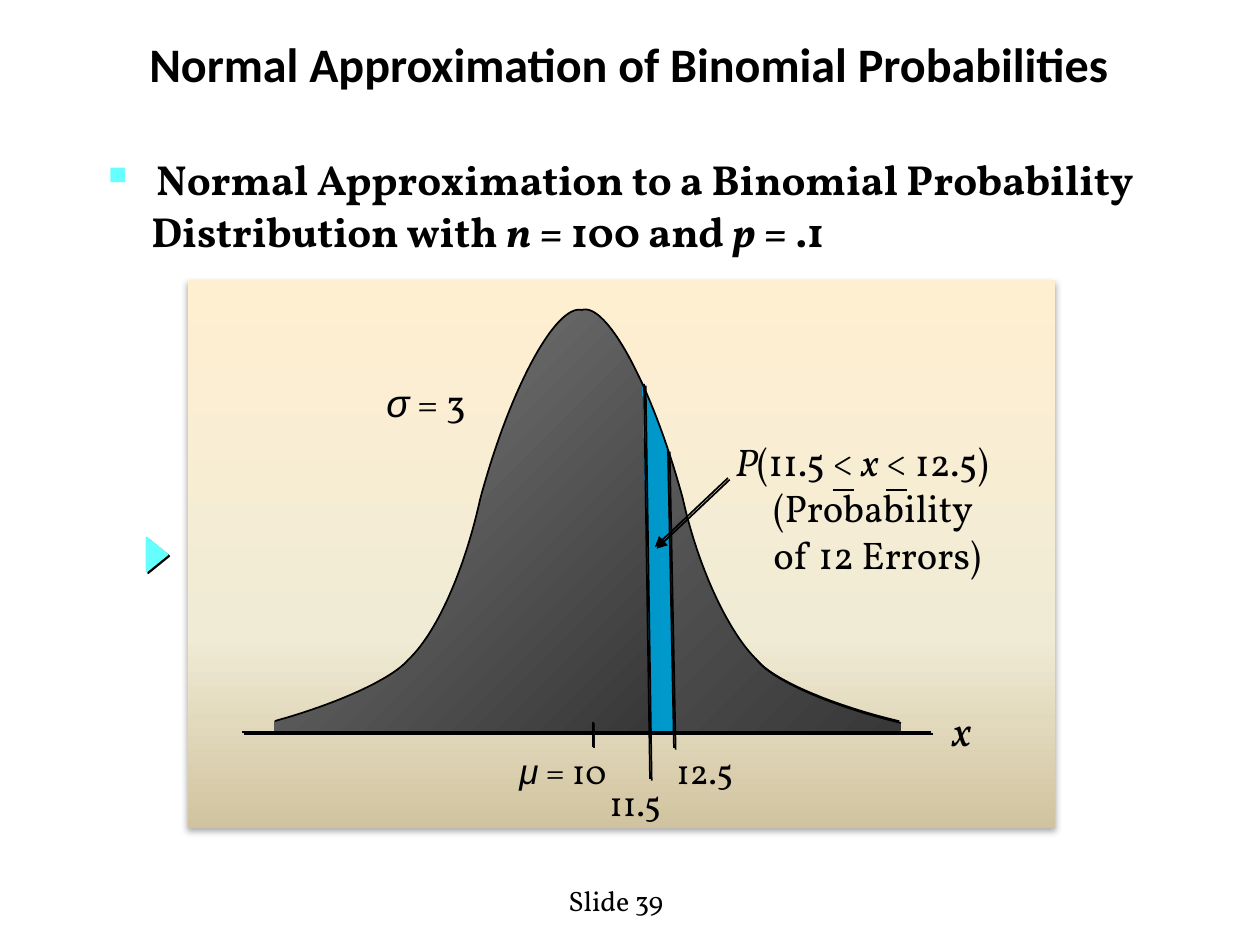
from typing import NamedTuple

import pptx
import pptx.dml.color
import pptx.enum.shapes
import pptx.enum.text
import pptx.oxml
import pptx.oxml.ns
import pptx.util

PX = 914400 / 126
COLORS = {
    "ink": "000000", "aqua": "66FFFF", "tick_shadow": "0D0A10",
    "sand_top": "FFEFD1", "sand_mid": "F0EBD5", "sand_end": "D1C39F",
    "gray_dark": "383838", "gray_light": "7F7F7F",
    "blue_dark": "004D6C", "blue_mid": "0081AC", "blue": "0099CC",
}
BODY_FONT = "Vollkorn"
BASELINE = 731
GRAY = ([(0, "gray_dark"), (100, "gray_light")], 225)
BLUE = ([(0, "blue_dark"), (50, "blue_mid"), (100, "blue")], 0)
SAND = ([(0, "sand_top"), (65, "sand_mid"), (100, "sand_end")], 90)


class Run(NamedTuple):
    text: str
    italic: bool = False
    underline: bool = False
    font: str = BODY_FONT


class Para(NamedTuple):
    runs: list
    margin: int = 0
    hang: int = 0
    bullet: str = ""


class Label(NamedTuple):
    box: tuple
    paras: list
    size: int


class Rule(NamedTuple):
    start: tuple
    end: tuple
    shadow: tuple = ("ink", 100, 0, 1.4, 45)
    arrow: bool = False


class Arc(NamedTuple):
    """A cubic curve: start, two controls, end."""
    points: tuple
    shadow: tuple = ()

    def sample(self, steps: int = 40) -> list:
        result = []
        for i in range(steps + 1):
            t = i / steps
            weights = ((1 - t) ** 3, 3 * t * (1 - t) ** 2, 3 * t * t * (1 - t), t ** 3)
            result.append(tuple(sum(w * pt[axis] for w, pt in zip(weights, self.points))
                                for axis in (0, 1)))
        return result


ARCS = [
    Arc(((275, 721), (340, 703), (393, 678), (408, 660))),
    Arc(((408, 660), (436, 634), (464, 572), (480, 500))),
    Arc(((480, 500), (510, 388), (556, 304), (582, 310))),
    Arc(((582, 310), (607, 302), (653, 388), (683, 499))),
    Arc(((683, 499), (699, 571), (730, 634), (757, 660))),
    Arc(((757, 660), (772, 680), (830, 706), (901, 723)), ("ink", 100, 0, 1.4, 225)),
]
# Right end of the curve, foot on the baseline, fill
AREAS = [(901, 901, GRAY), (668, 674, BLUE), (644, 650, GRAY)]
RULES = [
    Rule((242, 732), (931, 732)),
    Rule((644, 384), (650, 779)),
    Rule((593, 722), (593, 747), ("tick_shadow", 100, 0, 1, 45)),
    Rule((728, 478), (655, 547), arrow=True),
    Rule((668, 450), (674, 748)),
]
LABELS = [
    Label((556, 877, 140, 47), [Para([Run("Slide 39")])], 16),
    Label((507, 743, 120, 54), [Para([Run("μ", True, font="Arial"), Run(" = 10")])], 20),
    Label((723, 432, 316, 152), [
        Para([Run("P", True), Run("(11.5 "), Run("<", underline=True), Run(" "),
              Run("x ", True), Run("<", underline=True), Run(" 12.5)")]),
        Para([Run("(Probability")], margin=38),
        Para([Run("of 12 Errors)")], margin=38)], 22),
    Label((940, 698, 47, 63), [Para([Run("x", True)])], 24),
    Label((597, 775, 87, 54), [Para([Run("11.5")])], 20),
    Label((664, 743, 87, 54), [Para([Run("12.5")])], 20),
    Label((374, 373, 111, 59), [Para([Run("σ", True, font="Arial"), Run(" = 3")])], 22),
]
HEADING = [
    Para([Run("Normal Approximation to a Binomial Probability")], 48, -48, "■"),
    Para([Run("Distribution with "), Run("n", True), Run(" = 100 and "),
          Run("p", True), Run(" = .1")], 43),
]


def px(*values: float) -> list:
    return [pptx.util.Emu(round(v * PX)) for v in values]


def rgb(name: str):
    return pptx.dml.color.RGBColor.from_string(COLORS[name])


def element(xml: str):
    return pptx.oxml.parse_xml(f"<a:root {pptx.oxml.ns.nsdecls('a')}>{xml}</a:root>")[0]


def set_gradient(sp, stops: list, angle: int) -> None:
    sp.fill.background()
    marks = "".join(f'<a:gs pos="{pos * 1000}"><a:srgbClr val="{COLORS[name]}"/></a:gs>'
                    for pos, name in stops)
    old = sp._element.spPr.find(pptx.oxml.ns.qn("a:noFill"))
    old.getparent().replace(old, element(
        f'<a:gradFill rotWithShape="1"><a:gsLst>{marks}</a:gsLst>'
        f'<a:lin ang="{angle * 60000}" scaled="0"/></a:gradFill>'))


def set_shadow(sp, shadow: tuple = ()) -> None:
    """Replace the theme's shadow by (colour, opacity, blur, distance, angle) or none."""
    effects = element("<a:effectLst/>")
    if shadow:
        name, alpha, blur, dist, angle = shadow
        effects.append(element(
            f'<a:outerShdw blurRad="{round(blur * 12700)}" dist="{round(dist * 12700)}" '
            f'dir="{angle * 60000}" algn="ctr" rotWithShape="0"><a:srgbClr val="{COLORS[name]}">'
            f'<a:alpha val="{alpha * 1000}"/></a:srgbClr></a:outerShdw>'))
    sp._element.spPr.append(effects)


def set_line(sp, name: str = "ink") -> None:
    sp.line.color.rgb = rgb(name)
    sp.line.width = pptx.util.Pt(1)


def write_text(tf, paras: list, *, size: float, bold: bool = False, align=None,
               spacing: float = 0, before: float = 0) -> None:
    for i, para in enumerate(paras):
        p = tf.add_paragraph() if i else tf.paragraphs[0]
        p.alignment = align
        if spacing:
            p.line_spacing = pptx.util.Pt(spacing)
            p.space_before = pptx.util.Pt(before)
        margin, hang = px(para.margin, para.hang)
        pPr = p._p.get_or_add_pPr()
        pPr.set("marL", str(margin))
        pPr.set("indent", str(hang))
        if para.bullet:
            pPr.append(element(f'<a:buClr><a:srgbClr val="{COLORS["aqua"]}"/></a:buClr>'))
            pPr.append(element('<a:buSzPct val="60000"/>'))
            pPr.append(element(f'<a:buChar char="{para.bullet}"/>'))
        for run in para.runs:
            r = p.add_run()
            r.text = run.text
            r.font.size = pptx.util.Pt(size)
            r.font.name = run.font
            r.font.bold, r.font.italic, r.font.underline = bold, run.italic, run.underline
            r.font.color.rgb = rgb("ink")


def draw_path(s, points: list, close: bool):
    first, *rest = [px(*pt) for pt in points]
    builder = s.shapes.build_freeform(*first, scale=1.0)
    builder.add_line_segments(rest, close=close)
    return builder.convert_to_shape()


def draw_area(s, limit: int, foot: int, fill: tuple) -> None:
    """Fill the region under the curve from its left end to the limit."""
    curve = [pt for arc in ARCS for pt in arc.sample() if pt[0] <= limit]
    sp = draw_path(s, curve + [(foot, BASELINE), (275, BASELINE)], True)
    set_gradient(sp, *fill)
    sp.line.fill.background()
    set_shadow(sp)


def draw_arc(s, arc: Arc) -> None:
    sp = draw_path(s, arc.sample(), False)
    sp.fill.background()
    set_line(sp)
    set_shadow(sp, arc.shadow)


def draw_rule(s, rule: Rule) -> None:
    sp = s.shapes.add_connector(pptx.enum.shapes.MSO_CONNECTOR.STRAIGHT,
                                *px(*rule.start, *rule.end))
    set_line(sp)
    if rule.arrow:
        sp.line._get_or_add_ln().append(element('<a:tailEnd type="triangle"/>'))
    set_shadow(sp, rule.shadow)


def draw_label(s, label: Label) -> None:
    tf = s.shapes.add_textbox(*px(*label.box)).text_frame
    tf.word_wrap = False
    tf.auto_size = pptx.enum.text.MSO_AUTO_SIZE.SHAPE_TO_FIT_TEXT
    write_text(tf, label.paras, size=label.size)


def main() -> None:
    prs = pptx.Presentation()
    prs.slide_width, prs.slide_height = px(1260, 945)
    s = prs.slides.add_slide(prs.slide_layouts[5])

    title = s.shapes.title
    title.left, title.top, title.width, title.height = px(76, 7, 1106, 112)
    tf = title.text_frame
    tf.auto_size = pptx.enum.text.MSO_AUTO_SIZE.NONE
    tf.vertical_anchor = pptx.enum.text.MSO_ANCHOR.MIDDLE
    write_text(tf, [Para([Run("Normal Approximation of Binomial Probabilities", font="Calibri")])],
               size=27.5, bold=True, align=pptx.enum.text.PP_ALIGN.CENTER)

    tf = s.shapes.add_textbox(*px(96, 154, 1071, 88)).text_frame
    tf.word_wrap = True
    write_text(tf, HEADING, size=24, bold=True, spacing=25, before=4.8)

    shape = pptx.enum.shapes.MSO_SHAPE
    panel = s.shapes.add_shape(shape.RECTANGLE, *px(188, 280, 867, 548))
    set_gradient(panel, *SAND)
    panel.line.fill.background()
    set_shadow(panel, ("ink", 32, 3.5, 2.2, 90))

    marker = s.shapes.add_shape(shape.ISOSCELES_TRIANGLE, *px(140, 544, 34, 21))
    marker.rotation = 90
    marker.fill.solid()
    marker.fill.fore_color.rgb = rgb("aqua")
    set_line(marker, "aqua")
    set_shadow(marker, ("ink", 100, 0, 1.4, 45))

    for area in AREAS:
        draw_area(s, *area)
    for arc in ARCS:
        draw_arc(s, arc)
    for rule in RULES:
        draw_rule(s, rule)
    for label in LABELS:
        draw_label(s, label)
    prs.save("out.pptx")


if __name__ == "__main__":
    main()
